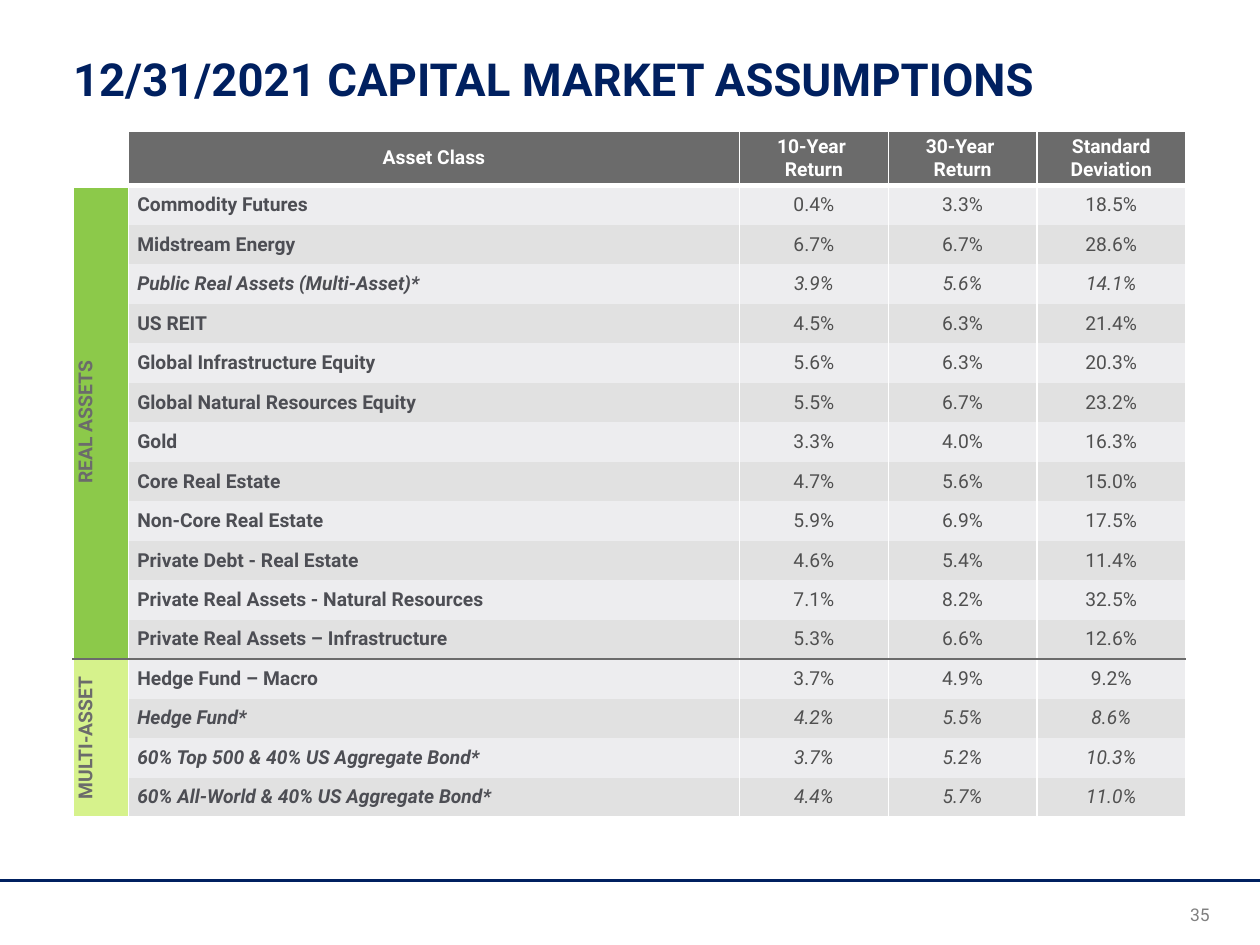
import pptx
import pptx.dml.color
import pptx.enum.text
import pptx.oxml
import pptx.oxml.ns
import pptx.util

Inches = pptx.util.Inches
Pt = pptx.util.Pt
RGBColor = pptx.dml.color.RGBColor
ALIGN = pptx.enum.text.PP_ALIGN
ANCHOR = pptx.enum.text.MSO_ANCHOR

FONT = "Roboto"
NAVY = RGBColor(0x00, 0x20, 0x60)
WHITE = RGBColor(0xFF, 0xFF, 0xFF)
GRAY = RGBColor(0x6B, 0x6B, 0x6B)
PAGE_GRAY = RGBColor(0x80, 0x80, 0x80)
NAME_GRAY = RGBColor(0x4D, 0x4E, 0x54)
VALUE_GRAY = RGBColor(0x50, 0x50, 0x50)
BANDS = (RGBColor(0xED, 0xED, 0xEF), RGBColor(0xE1, 0xE1, 0xE1))
GREEN = RGBColor(0x8C, 0xC9, 0x4A)
LIME = RGBColor(0xD6, 0xF2, 0x8C)

HEADINGS = ["Asset Class", "10-Year \nReturn", "30-Year \nReturn", "Standard Deviation"]
# An asterisk marks the composite asset classes, which are set in italics
GROUPS = [
    ("REAL ASSETS", GREEN, [
        ("Commodity Futures", "0.4%", "3.3%", "18.5%"),
        ("Midstream Energy", "6.7%", "6.7%", "28.6%"),
        ("Public Real Assets (Multi-Asset)*", "3.9%", "5.6%", "14.1%"),
        ("US REIT", "4.5%", "6.3%", "21.4%"),
        ("Global Infrastructure Equity", "5.6%", "6.3%", "20.3%"),
        ("Global Natural Resources Equity", "5.5%", "6.7%", "23.2%"),
        ("Gold", "3.3%", "4.0%", "16.3%"),
        ("Core Real Estate", "4.7%", "5.6%", "15.0%"),
        ("Non-Core Real Estate", "5.9%", "6.9%", "17.5%"),
        ("Private Debt - Real Estate", "4.6%", "5.4%", "11.4%"),
        ("Private Real Assets - Natural Resources", "7.1%", "8.2%", "32.5%"),
        ("Private Real Assets – Infrastructure", "5.3%", "6.6%", "12.6%"),
    ]),
    ("MULTI-ASSET", LIME, [
        ("Hedge Fund – Macro", "3.7%", "4.9%", "9.2%"),
        ("Hedge Fund*", "4.2%", "5.5%", "8.6%"),
        ("60% Top 500 & 40% US Aggregate Bond*", "3.7%", "5.2%", "10.3%"),
        ("60% All-World & 40% US Aggregate Bond*", "4.4%", "5.7%", "11.0%"),
    ]),
]


def add_text(paragraph, text, size, color, bold=False, italic=False, align=ALIGN.LEFT):
    paragraph.alignment = align
    for number, line in enumerate(text.split("\n")):
        if number:
            paragraph.add_line_break()
        run = paragraph.add_run()
        run.text = line
        run.font.name = FONT
        run.font.size = Pt(size)
        run.font.bold = bold
        run.font.italic = italic
        run.font.color.rgb = color


def add_text_box(slide, left, top, width, height, insets):
    frame = slide.shapes.add_textbox(left, top, width, height).text_frame
    frame.word_wrap = True
    frame.vertical_anchor = ANCHOR.BOTTOM
    frame.margin_left, frame.margin_top, frame.margin_right, frame.margin_bottom = map(Inches, insets)
    return frame.paragraphs[0]


def set_borders(cell, top, bottom):
    """Draw white sides; top and bottom are (color, points) or None."""
    properties = cell._tc.get_or_add_tcPr()
    side = (WHITE, 1)
    for tag, border in zip(("lnL", "lnR", "lnT", "lnB"), (side, side, top, bottom)):
        color, points = border or (WHITE, 0)
        paint = f'<a:solidFill><a:srgbClr val="{color}"/></a:solidFill>' if border else "<a:noFill/>"
        properties.append(pptx.oxml.parse_xml(
            f'<a:{tag} {pptx.oxml.ns.nsdecls("a")} w="{Pt(points)}">{paint}</a:{tag}>'))


def style_cell(cell, fill, inset=0.0):
    cell.vertical_anchor = ANCHOR.MIDDLE
    cell.margin_left = cell.margin_right = Inches(inset)
    cell.margin_top = cell.margin_bottom = 0
    cell.fill.solid()
    cell.fill.fore_color.rgb = fill
    return cell.text_frame.paragraphs[0]


def add_title(slide, left, top, width, height):
    title = add_text_box(slide, left, top, width, height, (0, 0.05, 0, 0))
    title.line_spacing = Pt(27)
    add_text(title, "12/31/2021 CAPITAL MARKET ASSUMPTIONS", 26, NAVY, bold=True)


def add_assumptions(slide, left, top, width, height):
    row_count = 1 + sum(len(assets) for _, _, assets in GROUPS)
    table = slide.shapes.add_table(row_count, 5, left, top, width, height).table
    table.first_row = table.horz_banding = False

    # Column widths and row heights
    group_width, value_width, header_height = Inches(0.44), Inches(1.18), Inches(0.43)
    name_width = width - group_width - 3 * value_width
    for column, size in zip(table.columns, [group_width, name_width] + [value_width] * 3):
        column.width = size
    for row in table.rows:
        row.height = int((height - header_height) / (row_count - 1))
    table.rows[0].height = header_height

    # Rules below the header, between the groups and at the foot
    rules = {-1: (WHITE, 1), 0: (WHITE, 3), len(GROUPS[0][2]): (GRAY, 1), row_count - 1: (WHITE, 1)}

    # Header row
    set_borders(table.cell(0, 0), rules[-1], rules[0])
    table.cell(0, 0).fill.background()
    for column, heading in enumerate(HEADINGS, 1):
        cell = table.cell(0, column)
        set_borders(cell, rules[-1], rules[0])
        add_text(style_cell(cell, GRAY, 0.04), heading, 11, WHITE, bold=True, align=ALIGN.CENTER)

    # Groups with their asset classes
    first = 1
    for group, color, assets in GROUPS:
        last = first + len(assets) - 1
        label = table.cell(first, 0)
        label.merge(table.cell(last, 0))
        set_borders(label, rules[first - 1], rules[last])
        paragraph = style_cell(label, color, 0.07)
        label._tc.tcPr.set("vert", "vert270")
        paragraph.line_spacing = 1.07
        add_text(paragraph, group, 11, GRAY, bold=True, align=ALIGN.CENTER)

        for row, (name, *values) in enumerate(assets, first):
            band = BANDS[(row - 1) % 2]
            italic = name.endswith("*")
            for column, text in enumerate([name] + values, 1):
                cell = table.cell(row, column)
                set_borders(cell, rules.get(row - 1), rules.get(row))
                if column == 1:
                    paragraph = style_cell(cell, band)
                    cell.margin_left = Inches(0.07)
                    add_text(paragraph, text, 11, NAME_GRAY, True, italic)
                else:
                    add_text(style_cell(cell, band), text, 11, VALUE_GRAY, False, italic, ALIGN.CENTER)
        first = last + 1


def add_footer(slide, left, top, width, height):
    rule = slide.shapes.add_connector(1, left, top, left + width, top)
    rule.line.color.rgb = NAVY
    rule.line.width = Pt(1.5)
    rule._element.spPr.append(pptx.oxml.parse_xml(f'<a:effectLst {pptx.oxml.ns.nsdecls("a")}/>'))
    number_height = Inches(0.24)
    number = add_text_box(slide, left + Inches(8.75), top + height - Inches(0.16) - number_height,
                          Inches(0.85), number_height, (0.1, 0.05, 0, 0))
    add_text(number, "35", 10, PAGE_GRAY, align=ALIGN.RIGHT)


def main():
    deck = pptx.Presentation()
    deck.slide_width, deck.slide_height = Inches(10), Inches(7.5)
    slide = deck.slides.add_slide(deck.slide_layouts[6])
    add_footer(slide, 0, Inches(6.99), Inches(10), Inches(0.51))
    add_title(slide, Inches(0.58), Inches(0.01), Inches(8.83), Inches(0.83))
    add_assumptions(slide, Inches(0.58), Inches(1.04), Inches(8.83), Inches(5.45))
    deck.save("out.pptx")


if __name__ == "__main__":
    main()
